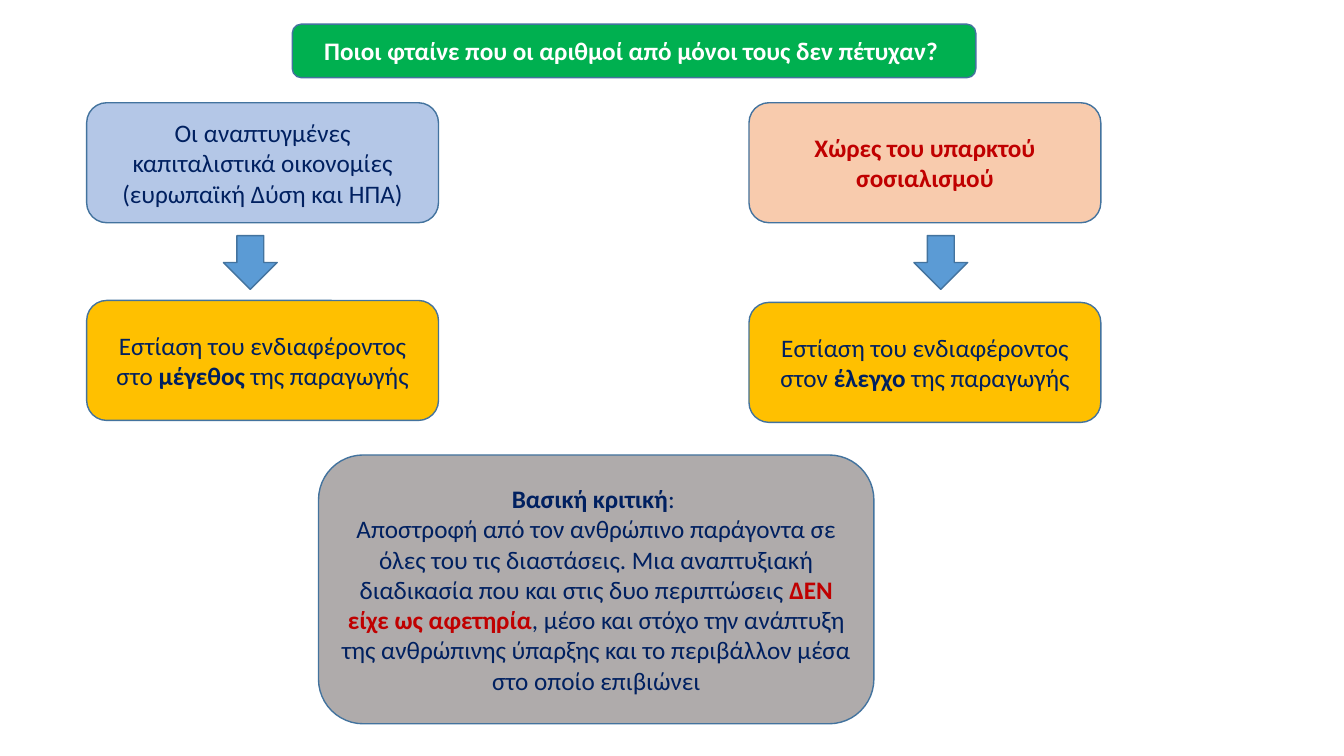
from dataclasses import dataclass

from pptx import Presentation
from pptx.dml.color import RGBColor
from pptx.enum.shapes import MSO_SHAPE
from pptx.enum.text import MSO_ANCHOR, PP_ALIGN
from pptx.util import Pt


@dataclass(frozen=True)
class Theme:
    font: str = "Calibri"
    text_size: float = 18
    line_width: float = 1
    outline: str = "43739E"
    white: str = "FFFFFF"
    navy: str = "002060"
    red: str = "C00000"
    green: str = "00B050"
    light_blue: str = "B4C7E7"
    peach: str = "F8CBAD"
    amber: str = "FFC000"
    gray: str = "AFABAB"
    arrow_blue: str = "5B9BD5"


THEME = Theme()
COLUMN_WIDTH, COLUMN_HEIGHT = 251.3, 85.7
ARROW_SIZE = 38.4


def add_outlined_shape(slide, kind, bounds, fill):
    shape = slide.shapes.add_shape(kind, *(Pt(length) for length in bounds))
    shape.shadow.inherit = False
    shape.fill.solid()
    shape.fill.fore_color.rgb = RGBColor.from_string(fill)
    shape.line.color.rgb = RGBColor.from_string(THEME.outline)
    shape.line.width = Pt(THEME.line_width)
    return shape


def add_run(paragraph, text, color, bold=False):
    run = paragraph.add_run()
    run.text = text
    font_format = {"name": THEME.font, "size": Pt(THEME.text_size), "bold": bold}
    for attribute, value in font_format.items():
        setattr(run.font, attribute, value)
    run.font.color.rgb = RGBColor.from_string(color)


def add_box(slide, bounds, fill, *paragraphs):
    """Add a rounded box; each paragraph is a list of (text, color, bold) runs."""
    shape = add_outlined_shape(slide, MSO_SHAPE.ROUNDED_RECTANGLE, bounds, fill)
    frame = shape.text_frame
    frame.word_wrap = True
    frame.vertical_anchor = MSO_ANCHOR.MIDDLE
    for index, runs in enumerate(paragraphs):
        paragraph = frame.add_paragraph() if index else frame.paragraphs[0]
        paragraph.alignment = PP_ALIGN.CENTER
        for run in runs:
            add_run(paragraph, *run)


def add_column(slide, left, arrow_left, focus_top, fill, heading, focus):
    """Add a heading box, an arrow down and the focus box it leads to."""
    size = (COLUMN_WIDTH, COLUMN_HEIGHT)
    add_box(slide, (left, 73.4, *size), fill, [heading])
    arrow_bounds = (arrow_left, 168.3, ARROW_SIZE, ARROW_SIZE)
    add_outlined_shape(slide, MSO_SHAPE.DOWN_ARROW, arrow_bounds, THEME.arrow_blue)
    add_box(slide, (left, focus_top, *size), THEME.amber, focus)


def main():
    presentation = Presentation()
    presentation.slide_width, presentation.slide_height = Pt(960), Pt(540)
    slide = presentation.slides.add_slide(presentation.slide_layouts[6])

    add_box(
        slide, (208.8, 17.3, 488.2, 38.2), THEME.green,
        [("Ποιοι φταίνε που οι αριθμοί από μόνοι τους δεν πέτυχαν? ", THEME.white, True)],
    )
    add_column(
        slide, 61.9, 159.6, 214.6, THEME.light_blue,
        ("Οι αναπτυγμένες καπιταλιστικά οικονομίες (ευρωπαϊκή Δύση και ΗΠΑ)", THEME.navy),
        [
            ("Εστίαση του ενδιαφέροντος στο ", THEME.navy),
            ("μέγεθος", THEME.navy, True),
            (" της παραγωγής", THEME.navy),
        ],
    )
    add_column(
        slide, 535, 652.8, 216, THEME.peach,
        ("Χώρες του υπαρκτού σοσιαλισμού", THEME.red, True),
        [
            ("Εστίαση του ενδιαφέροντος στον ", THEME.navy),
            ("έλεγχο", THEME.navy, True),
            (" της παραγωγής", THEME.navy),
        ],
    )
    add_box(
        slide, (227.5, 325, 396.7, 192), THEME.gray,
        [("Βασική κριτική", THEME.navy, True), (": ", THEME.navy)],
        [
            ("Αποστροφή από τον ανθρώπινο παράγοντα σε όλες του τις διαστάσεις. "
             "Μια αναπτυξιακή διαδικασία που και στις δυο περιπτώσεις ", THEME.navy),
            ("ΔΕΝ είχε ως αφετηρία", THEME.red, True),
            (", μέσο και στόχο την ανάπτυξη της ανθρώπινης ύπαρξης "
             "και το περιβάλλον μέσα στο οποίο επιβιώνει", THEME.navy),
        ],
    )
    presentation.save("out.pptx")


if __name__ == "__main__":
    main()
